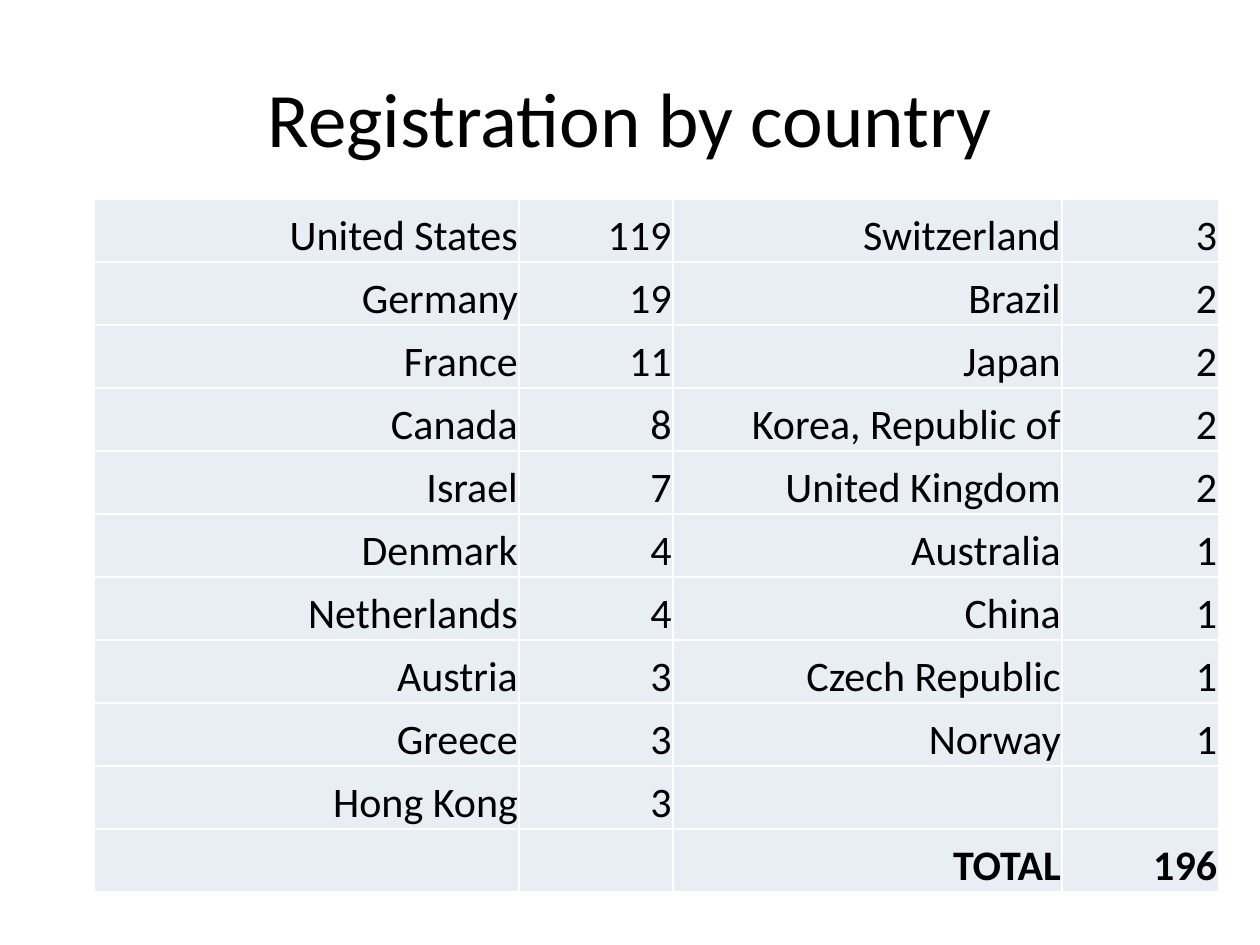
from pptx import Presentation
from pptx.dml.color import RGBColor
from pptx.enum.text import MSO_ANCHOR, PP_ALIGN
from pptx.oxml.xmlchemy import OxmlElement
from pptx.util import Inches, Pt

FONT = "Calibri"
COLUMN_WIDTHS = [3.37, 1.22, 3.09, 1.24]
ROW_HEIGHT = 0.5
REGISTRATIONS = [
    ("United States", "119", "Switzerland", "3"),
    ("Germany", "19", "Brazil", "2"),
    ("France", "11", "Japan", "2"),
    ("Canada", "8", "Korea, Republic of", "2"),
    ("Israel", "7", "United Kingdom", "2"),
    ("Denmark", "4", "Australia", "1"),
    ("Netherlands", "4", "China", "1"),
    ("Austria", "3", "Czech Republic", "1"),
    ("Greece", "3", "Norway", "1"),
    ("Hong Kong", "3", "", ""),
    ("", "", "TOTAL", "196"),
]


def color(value):
    return RGBColor.from_string(value)


def format_text(frame, size, alignment, bold=False):
    for paragraph in frame.paragraphs:
        paragraph.alignment = alignment
        # The paragraph font also sizes cells without text
        for font in [paragraph.font] + [span.font for span in paragraph.runs]:
            font.name = FONT
            font.size = Pt(size)
            font.bold = bold
            font.color.rgb = color("000000")


def set_borders(cell, value, width):
    properties = cell._tc.get_or_add_tcPr()
    for position, side in enumerate(("lnL", "lnR", "lnT", "lnB")):
        line = OxmlElement(f"a:{side}")
        line.set("w", str(Pt(width)))
        fill = OxmlElement("a:solidFill")
        shade = OxmlElement("a:srgbClr")
        shade.set("val", value)
        fill.append(shade)
        line.append(fill)
        properties.insert(position, line)  # borders precede the cell fill


def add_title(page, text):
    title = page.shapes.title
    title.left, title.top = Inches(0.5), Inches(0.3)
    title.width, title.height = Inches(9), Inches(1.25)
    title.text_frame.text = text
    title.text_frame.vertical_anchor = MSO_ANCHOR.MIDDLE
    format_text(title.text_frame, 44, PP_ALIGN.CENTER)


def fill_cell(cell, text, bold):
    cell.fill.solid()
    cell.fill.fore_color.rgb = color("E9EDF4")
    cell.margin_left = cell.margin_right = cell.margin_top = Inches(0.01)
    cell.margin_bottom = 0
    cell.vertical_anchor = MSO_ANCHOR.BOTTOM
    cell.text_frame.text = text
    format_text(cell.text_frame, 24, PP_ALIGN.RIGHT, bold)
    set_borders(cell, "FFFFFF", 1)


def add_country_table(page):
    frame = page.shapes.add_table(
        len(REGISTRATIONS), len(COLUMN_WIDTHS), Inches(0.75), Inches(1.58),
        Inches(sum(COLUMN_WIDTHS)), Inches(ROW_HEIGHT * len(REGISTRATIONS)))
    table = frame.table
    table.first_row = table.horz_banding = False
    for column, width in zip(table.columns, COLUMN_WIDTHS):
        column.width = Inches(width)
    for row, values in zip(table.rows, REGISTRATIONS):
        row.height = Inches(ROW_HEIGHT)
        for cell, text in zip(row.cells, values):
            fill_cell(cell, text, bold="TOTAL" in values)


def main():
    deck = Presentation()
    deck.slide_width, deck.slide_height = Inches(10), Inches(7.5)
    page = deck.slides.add_slide(deck.slide_layouts[5])  # title only
    add_title(page, "Registration by country")
    add_country_table(page)
    deck.save("out.pptx")


if __name__ == "__main__":
    main()
